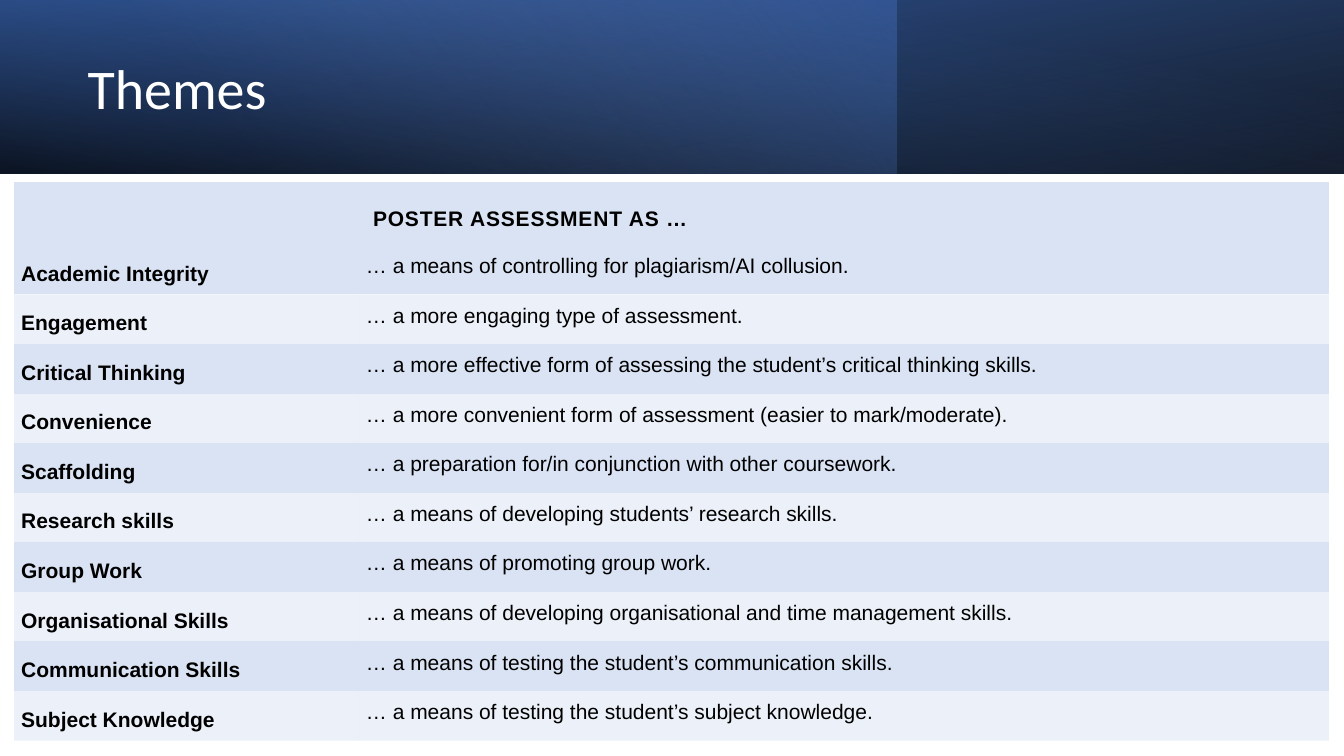
from lxml import etree
from pptx import Presentation
from pptx.dml.color import RGBColor
from pptx.enum import shapes, text
from pptx.oxml.ns import qn
from pptx.util import Inches, Pt

COLORS = {
    "black": "000000",
    "white": "FFFFFF",
    "navy": "2F5597",
    "blue": "4472C4",
    "sky": "8FAADC",
    "band": "DAE3F3",
}
NO_GRID_STYLE = "{2D5ABB26-0587-4C30-8999-92F81FD0307C}"
HEADING = "POSTER ASSESSMENT AS …"
THEMES = [
    ("Academic Integrity", "… a means of controlling for plagiarism/AI collusion."),
    ("Engagement", "… a more engaging type of assessment."),
    ("Critical Thinking", "… a more effective form of assessing the student’s critical thinking skills."),
    ("Convenience", "… a more convenient form of assessment (easier to mark/moderate)."),
    ("Scaffolding", "… a preparation for/in conjunction with other coursework."),
    ("Research skills", "… a means of developing students’ research skills."),
    ("Group Work", "… a means of promoting group work."),
    ("Organisational Skills", "… a means of developing organisational and time management skills."),
    ("Communication Skills", "… a means of testing the student’s communication skills."),
    ("Subject Knowledge", "… a means of testing the student’s subject knowledge."),
]
HEADING_INSETS = (0.14, 0.14, 0.14, 0.14)
THEME_INSETS = (0.07, 0.02, 0.01, 0.09)


def rgb(name):
    return RGBColor.from_string(COLORS[name])


def set_opacity(color_element, percent):
    alpha = etree.SubElement(color_element, qn("a:alpha"))
    alpha.set("val", str(percent * 1000))


def format_run(r, font, size, color, bold=False):
    r.font.name = font
    r.font.size = Pt(size)
    r.font.bold = bold
    r.font.color.rgb = rgb(color)


def add_gradient_band(slide, width, stops, angle, rotation=0, mirrored=False):
    """Add a banner layer; stops are (position, color, opacity), angle is clockwise."""
    sp = slide.shapes.add_shape(
        shapes.MSO_SHAPE.RECTANGLE, 0, 0, Inches(width), Inches(1.72))
    sp.shadow.inherit = False
    sp.line.fill.background()
    sp.fill.gradient()
    sp.fill.gradient_angle = 360 - angle
    for stop, (position, color, _) in zip(sp.fill.gradient_stops, stops):
        stop.position = position
        stop.color.rgb = rgb(color)
    spPr = sp._element.spPr
    for element, (_, _, opacity) in zip(list(spPr.iter(qn("a:srgbClr"))), stops):
        set_opacity(element, opacity)
    sp.rotation = rotation
    if mirrored:
        spPr.find(qn("a:xfrm")).set("flipH", "1")


def add_title(slide, title):
    sp = slide.shapes.add_textbox(Inches(0.77), Inches(0.27), Inches(7.72), Inches(1.27))
    tf = sp.text_frame
    tf.word_wrap = True
    tf.vertical_anchor = text.MSO_ANCHOR.MIDDLE
    p = tf.paragraphs[0]
    p.text = title
    p.line_spacing = 0.9
    format_run(p.runs[0], "Calibri", 40, "white")


def fill_cell(cell, content, insets, anchor, bold):
    cell.margin_left, cell.margin_top, cell.margin_right, cell.margin_bottom = map(Inches, insets)
    cell.vertical_anchor = anchor
    cell.text = content
    for r in cell.text_frame.paragraphs[0].runs:
        format_run(r, "Arial", 15, "black", bold)


def shade_cell(cell, pale):
    cell.fill.solid()
    cell.fill.fore_color.rgb = rgb("band")
    if pale:
        set_opacity(cell._tc.tcPr.find(".//" + qn("a:srgbClr")), 50)


def add_theme_table(slide):
    frame = slide.shapes.add_table(
        len(THEMES) + 1, 2, Inches(0.14), Inches(1.81), Inches(13.04), Inches(5.54))
    table = frame.table
    table.first_row = table.horz_banding = False
    table._tbl.tblPr.find(qn("a:tableStyleId")).text = NO_GRID_STYLE
    table.columns[0].width = Inches(3.42)
    table.columns[1].width = Inches(9.62)

    bottom, middle = text.MSO_ANCHOR.BOTTOM, text.MSO_ANCHOR.MIDDLE
    table.rows[0].height = Inches(0.62)
    heading = table.cell(0, 1)
    fill_cell(heading, HEADING, HEADING_INSETS, bottom, True)
    heading.text_frame.paragraphs[0].runs[0].font._element.set("spc", "60")

    for i, (theme, purpose) in enumerate(THEMES, start=1):
        table.rows[i].height = Inches(4.92 / len(THEMES))
        fill_cell(table.cell(i, 0), theme, THEME_INSETS, bottom, True)
        fill_cell(table.cell(i, 1), purpose, THEME_INSETS, middle, False)

    for i, row in enumerate(table.rows):
        for cell in row.cells:
            shade_cell(cell, pale=i > 0 and i % 2 == 0)


def main():
    prs = Presentation()
    prs.slide_width, prs.slide_height = Inches(13.33), Inches(7.5)
    slide = prs.slides.add_slide(prs.slide_layouts[6])
    add_gradient_band(slide, 13.33, [(0, "black", 96), (1, "navy", 100)], 100,
                      rotation=180, mirrored=True)
    add_gradient_band(slide, 8.89, [(0, "blue", 41), (0.74, "sky", 0)], 140)
    add_gradient_band(slide, 13.33, [(0, "black", 63), (0.78, "blue", 15)], 260,
                      mirrored=True)
    add_title(slide, "Themes")
    add_theme_table(slide)
    prs.save("out.pptx")


if __name__ == "__main__":
    main()
